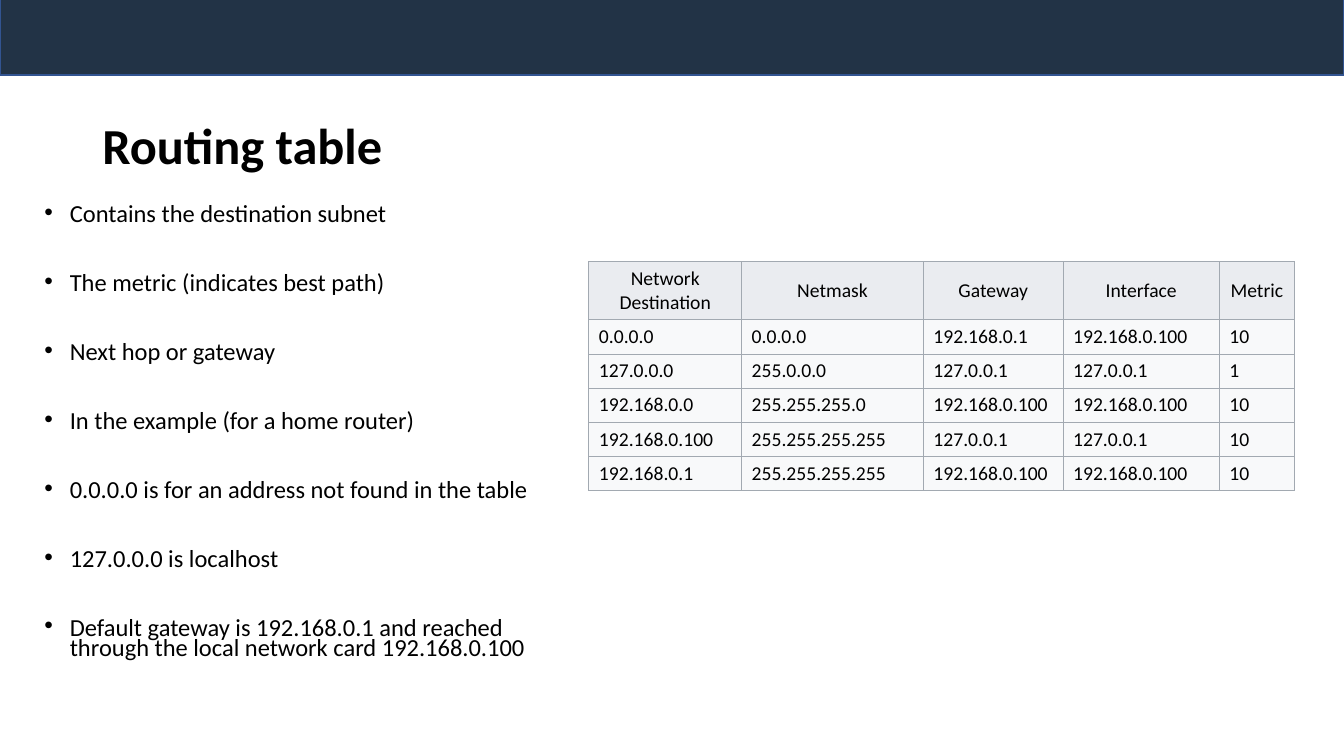
from lxml.etree import SubElement
from pptx import Presentation
from pptx.dml.color import RGBColor
from pptx.enum.shapes import MSO_SHAPE
from pptx.enum.text import MSO_ANCHOR, PP_ALIGN
from pptx.oxml.ns import qn
from pptx.util import Cm, Pt

FONT = "Calibri"
COLORS = {
    "bar": "223346",
    "bar_line": "325491",
    "text": "000000",
    "header": "EAECF0",
    "body": "F8F9FA",
    "border": "A2A9B1",
}
BULLETS = [
    "Contains the destination subnet",
    "The metric (indicates best path)",
    "Next hop or gateway",
    "In the example (for a home router)",
    "0.0.0.0 is for an address not found in the table",
    "127.0.0.0 is localhost",
    "Default gateway is 192.168.0.1 and reached through the local network card 192.168.0.100",
]
ROUTES = [
    ["Network Destination", "Netmask", "Gateway", "Interface", "Metric"],
    ["0.0.0.0", "0.0.0.0", "192.168.0.1", "192.168.0.100", "10"],
    ["127.0.0.0", "255.0.0.0", "127.0.0.1", "127.0.0.1", "1"],
    ["192.168.0.0", "255.255.255.0", "192.168.0.100", "192.168.0.100", "10"],
    ["192.168.0.100", "255.255.255.255", "127.0.0.1", "127.0.0.1", "10"],
    ["192.168.0.1", "255.255.255.255", "192.168.0.100", "192.168.0.100", "10"],
]
COLUMN_WIDTHS = [3.85, 4.58, 3.52, 3.94, 1.89]
HEADER_HEIGHT = 1.46
ROW_HEIGHT = 0.86


def color(name):
    return RGBColor.from_string(COLORS[name])


def format_runs(paragraph, size, bold=False):
    for run in paragraph.runs:
        run.font.name = FONT
        run.font.size = Pt(size)
        run.font.bold = bold
        run.font.color.rgb = color("text")


def add_top_bar(slide, width):
    shape = slide.shapes.add_shape(MSO_SHAPE.RECTANGLE, 0, Cm(-0.09), width, Cm(1.98))
    shape.shadow.inherit = False
    shape.fill.solid()
    shape.fill.fore_color.rgb = color("bar")
    shape.line.color.rgb = color("bar_line")
    shape.line.width = Pt(1)


def add_text_frame(slide, left, top, width, height, anchor):
    text_frame = slide.shapes.add_textbox(Cm(left), Cm(top), Cm(width), Cm(height)).text_frame
    text_frame.word_wrap = True
    text_frame.vertical_anchor = anchor
    return text_frame


def add_title(slide, text):
    text_frame = add_text_frame(slide, 2.33, 1.9, 29.21, 3.68, MSO_ANCHOR.MIDDLE)
    text_frame.text = text
    paragraph = text_frame.paragraphs[0]
    paragraph.line_spacing = 0.9
    format_runs(paragraph, 36, bold=True)


def add_bullets(slide, items):
    text_frame = add_text_frame(slide, 0.87, 5.08, 13.77, 12.75, MSO_ANCHOR.TOP)
    text_frame.text = "\n".join(items)
    for index, paragraph in enumerate(text_frame.paragraphs):
        properties = paragraph._p.get_or_add_pPr()
        properties.set("marL", str(Cm(0.64)))
        properties.set("indent", str(Cm(-0.64)))
        SubElement(properties, qn("a:buFont"), typeface="Arial")
        SubElement(properties, qn("a:buChar"), char="•")
        paragraph.line_spacing = 0.7
        paragraph.space_before = Pt(34.5 if index else 0)
        format_runs(paragraph, 17.5)


def add_borders(cell):
    properties = cell._tc.get_or_add_tcPr()
    for position, side in enumerate(("lnL", "lnR", "lnT", "lnB")):
        line = SubElement(properties, qn(f"a:{side}"), w=str(Pt(0.75)))
        fill = SubElement(line, qn("a:solidFill"))
        SubElement(fill, qn("a:srgbClr"), val=COLORS["border"])
        properties.insert(position, line)


def format_cell(cell, text, is_header):
    cell.text = text
    cell.vertical_anchor = MSO_ANCHOR.MIDDLE
    cell.fill.solid()
    cell.fill.fore_color.rgb = color("header" if is_header else "body")
    add_borders(cell)
    paragraph = cell.text_frame.paragraphs[0]
    paragraph.alignment = PP_ALIGN.CENTER if is_header else PP_ALIGN.LEFT
    format_runs(paragraph, 14)


def add_routing_table(slide, rows):
    height = HEADER_HEIGHT + ROW_HEIGHT * (len(rows) - 1)
    table = slide.shapes.add_table(
        len(rows), len(COLUMN_WIDTHS), Cm(14.84), Cm(6.6), Cm(sum(COLUMN_WIDTHS)), Cm(height)
    ).table
    for column, width in zip(table.columns, COLUMN_WIDTHS):
        column.width = Cm(width)
    for index, (row, values) in enumerate(zip(table.rows, rows)):
        row.height = Cm(ROW_HEIGHT if index else HEADER_HEIGHT)
        for cell, value in zip(row.cells, values):
            format_cell(cell, value, index == 0)


def main():
    presentation = Presentation()
    presentation.slide_width = Cm(33.87)
    presentation.slide_height = Cm(19.05)
    slide = presentation.slides.add_slide(presentation.slide_layouts[6])
    add_top_bar(slide, presentation.slide_width)
    add_title(slide, "Routing table")
    add_bullets(slide, BULLETS)
    add_routing_table(slide, ROUTES)
    presentation.save("out.pptx")


if __name__ == "__main__":
    main()
